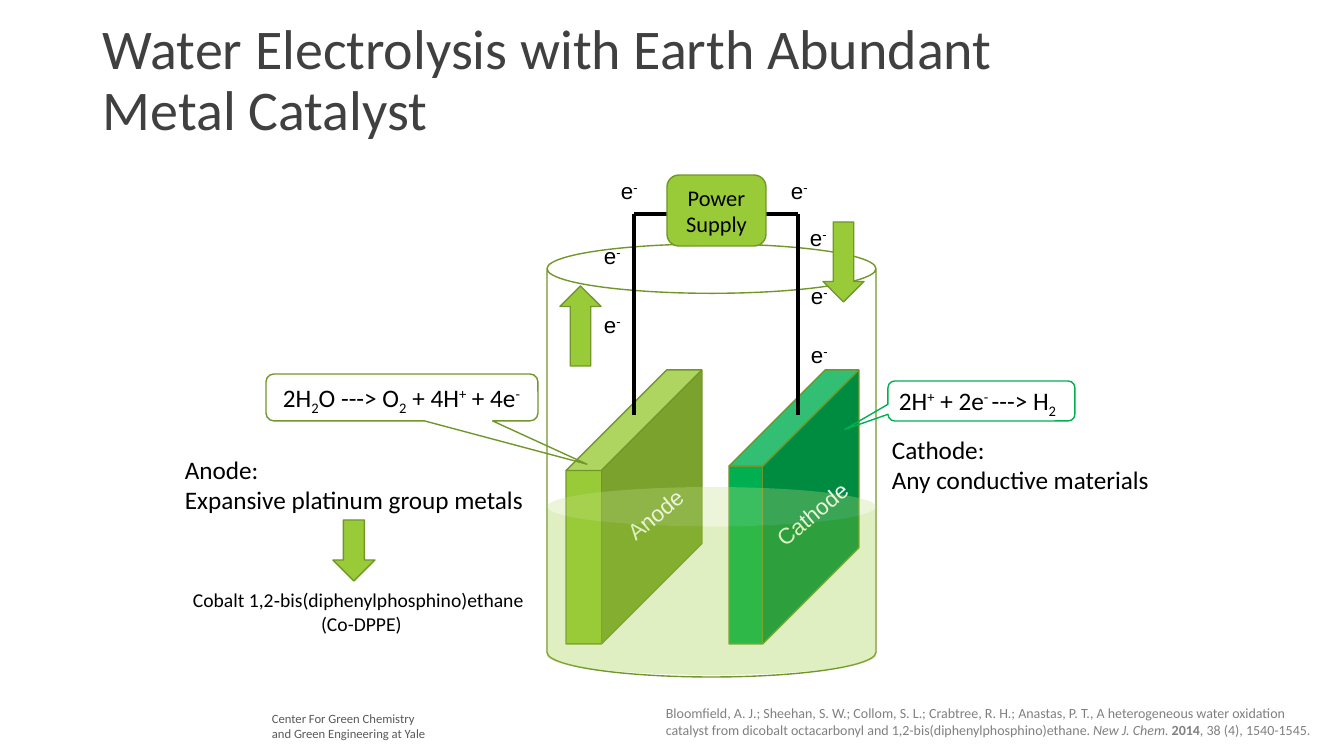
from lxml.etree import SubElement
from pptx import Presentation
from pptx.dml.color import RGBColor
from pptx.enum.shapes import MSO_CONNECTOR, MSO_SHAPE
from pptx.enum.text import MSO_ANCHOR, PP_ALIGN
from pptx.oxml.ns import qn
from pptx.util import Emu, Pt

PAGE_WIDTH, PAGE_HEIGHT = 1344, 756
SCALE = 12192000 / PAGE_WIDTH
BLACK = RGBColor(0, 0, 0)
WHITE = RGBColor(255, 255, 255)
TITLE_GRAY = RGBColor(0x40, 0x40, 0x40)
FOOTER_GRAY = RGBColor(0x59, 0x59, 0x59)
CITATION_GRAY = RGBColor(0x80, 0x80, 0x80)
LIME = RGBColor(0x99, 0xCB, 0x38)
OLIVE = RGBColor(0x71, 0x96, 0x29)
GREEN = RGBColor(0x00, 0xB0, 0x50)
SUBSCRIPT, SUPERSCRIPT = -25000, 30000


def px(length):
    return Emu(round(length * SCALE))


def format_span(span, size, color, font="Calibri"):
    span.font.size = Pt(size)
    span.font.name = font
    span.font.color.rgb = color


def add_text(page, area, lines, size, color=BLACK, font="Calibri", wrap=False, align=None):
    box = page.shapes.add_textbox(*map(px, area))
    frame = box.text_frame
    frame.text = "\n".join(lines)
    frame.word_wrap = wrap
    for para in frame.paragraphs:
        para.alignment = align
        for span in para.runs:
            format_span(span, size, color, font)
    return box


def add_formula(page, area, pieces, size, font="Calibri"):
    box = page.shapes.add_textbox(*map(px, area))
    box.text_frame.word_wrap = False
    para = box.text_frame.paragraphs[0]
    for text, baseline in pieces:
        span = para.add_run()
        span.text = text
        format_span(span, size, BLACK, font)
        if baseline:
            span.font._element.set("baseline", str(baseline))


def add_shape(page, kind, area, fill=None, line=OLIVE, adjustments=(), alpha=None):
    shape = page.shapes.add_shape(kind, *map(px, area))
    shape.shadow.inherit = False
    for index, value in enumerate(adjustments):
        shape.adjustments[index] = value
    if fill is None:
        shape.fill.background()
    else:
        shape.fill.solid()
        shape.fill.fore_color.rgb = fill
    if alpha:
        color = shape._element.spPr.find(qn("a:solidFill"))[0]
        SubElement(color, qn("a:alpha")).set("val", str(alpha * 1000))
    if line is None:
        shape.line.fill.background()
    else:
        shape.line.color.rgb = line
        shape.line.width = Pt(1)
    return shape


def add_wire(page, *ends):
    wire = page.shapes.add_connector(MSO_CONNECTOR.STRAIGHT, *map(px, ends))
    wire.line.color.rgb = BLACK
    wire.line.width = Pt(3)
    SubElement(wire._element.spPr, qn("a:effectLst"))


def add_title(page):
    box = add_text(page, (93, 16, 942, 132),
                   ["Water Electrolysis with Earth Abundant Metal Catalyst"],
                   40, TITLE_GRAY, wrap=True)
    box.text_frame.vertical_anchor = MSO_ANCHOR.MIDDLE
    box.text_frame.paragraphs[0].line_spacing = 0.9


def add_cell(page):
    add_shape(page, MSO_SHAPE.CUBE, (566, 370, 136, 274), LIME, adjustments=[0.74])
    add_shape(page, MSO_SHAPE.CAN, (547, 244, 329, 433), adjustments=[0.15])
    add_wire(page, 634, 214, 634, 415)
    add_shape(page, MSO_SHAPE.CUBE, (729, 370, 130, 274), GREEN, adjustments=[0.74])
    add_wire(page, 798, 214, 798, 415)
    add_wire(page, 798, 214, 634, 214)
    for name, area in (("Cathode", (759, 495, 106, 37)), ("Anode", (612, 496, 86, 37))):
        label = add_text(page, area, [name], 16, WHITE, "Arial", align=PP_ALIGN.CENTER)
        label.rotation = 320.2
    add_shape(page, MSO_SHAPE.CAN, (547, 487, 329, 188), LIME, None, [0.21], alpha=30)


def add_power_supply(page):
    supply = add_shape(page, MSO_SHAPE.ROUNDED_RECTANGLE, (667, 175, 99, 71), LIME)
    frame = supply.text_frame
    frame.text = "Power\nSupply"
    frame.vertical_anchor = MSO_ANCHOR.MIDDLE
    for para in frame.paragraphs:
        para.alignment = PP_ALIGN.CENTER
        format_span(para.runs[0], 16, BLACK)


def add_electrons(page):
    for left, top in ((594, 306), (594, 237), (611, 172), (781, 172),
                      (800, 219), (801, 277), (801, 336)):
        add_formula(page, (left, top, 38, 37), [("e", 0), ("-", SUPERSCRIPT)], 16, "Arial")
    add_shape(page, MSO_SHAPE.UP_ARROW, (560, 286, 41, 80), LIME)
    add_shape(page, MSO_SHAPE.DOWN_ARROW, (823, 222, 41, 80), LIME)


def add_reactions(page):
    add_formula(page, (273, 377, 264, 40),
                [("2H", 0), ("2", SUBSCRIPT), ("O ---> O", 0), ("2", SUBSCRIPT),
                 (" + 4H", 0), ("+", SUPERSCRIPT), (" + 4e", 0), ("-", SUPERSCRIPT)], 18)
    add_formula(page, (889, 380, 183, 40),
                [("2H", 0), ("+", SUPERSCRIPT), (" + 2e", 0), ("- ", SUPERSCRIPT),
                 ("---> H", 0), ("2", SUBSCRIPT)], 18)
    callout = MSO_SHAPE.ROUNDED_RECTANGULAR_CALLOUT
    add_shape(page, callout, (266, 374, 272, 47), adjustments=[0.68, 1.42, 0.17])
    add_shape(page, callout, (888, 381, 187, 40), line=GREEN, adjustments=[-0.73, 0.71, 0.17])


def add_materials(page):
    add_text(page, (882, 429, 280, 72), ["Cathode:", "Any conductive materials"], 18)
    add_text(page, (175, 449, 362, 72), ["Anode:", "Expansive platinum group metals"], 18)
    add_shape(page, MSO_SHAPE.DOWN_ARROW, (333, 520, 42, 61), LIME)
    catalyst = add_text(page, (183, 583, 357, 57),
                        ["Cobalt 1,2‐bis(diphenylphosphino)ethane", "(Co-DPPE)"], 14, wrap=True)
    catalyst.text_frame.paragraphs[1].alignment = PP_ALIGN.CENTER


def add_footer(page):
    add_text(page, (262, 706, 187, 40),
             ["Center For Green Chemistry", "and Green Engineering at Yale"],
             9, FOOTER_GRAY, wrap=True)
    citation = add_text(
        page, (656, 700, 681, 44),
        ["Bloomfield, A. J.; Sheehan, S. W.; Collom, S. L.; Crabtree, R. H.; Anastas, P. T., "
         "A heterogeneous water oxidation catalyst from dicobalt octacarbonyl and "
         "1,2-bis(diphenylphosphino)ethane. "], 10, CITATION_GRAY, wrap=True)
    para = citation.text_frame.paragraphs[0]
    for text, italic, bold in (("New J. Chem. ", True, False), ("2014", False, True),
                               (", 38 (4), 1540-1545.", False, False)):
        span = para.add_run()
        span.text = text
        format_span(span, 10, CITATION_GRAY)
        span.font.italic = italic
        span.font.bold = bold


def main():
    deck = Presentation()
    deck.slide_width = px(PAGE_WIDTH)
    deck.slide_height = px(PAGE_HEIGHT)
    page = deck.slides.add_slide(deck.slide_layouts[6])
    add_title(page)
    add_cell(page)
    add_power_supply(page)
    add_electrons(page)
    add_reactions(page)
    add_materials(page)
    add_footer(page)
    deck.save("out.pptx")


if __name__ == "__main__":
    main()
